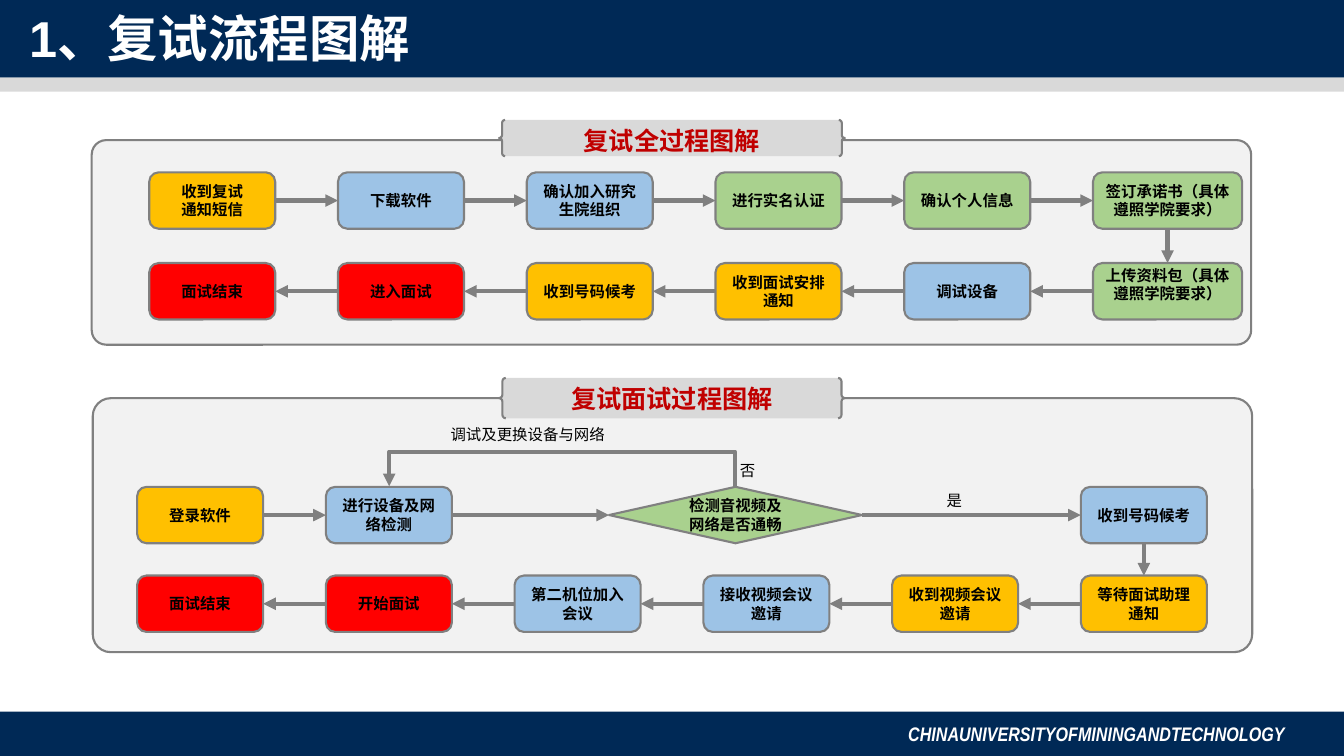
"""Build a slide with two flow charts of the admission interview."""
from lxml import etree
from pptx import Presentation, util as u
from pptx.dml.color import RGBColor
from pptx.enum import shapes as s, text as t
from pptx.oxml import ns

THEME = dict(
    navy="002956", band="D9D9D9", panel="F2F2F2", grey="808080",
    gold="FFC000", blue="9DC3E6", green="A9D18E", red="FF0000",
    white="FFFFFF", black="000000", head="C00000",
    title=36, sub=18, foot=14, step=11, edge=1.5, arrow=3,
    font="Arial", narrow="Arial Narrow",
)
TITLE = "1、复试流程图解"
FOOTER = "CHINAUNIVERSITYOFMININGANDTECHNOLOGY"
BARS = [(0, 0.77, "navy"), (0.77, 0.14, "band"), (7.06, 0.44, "navy")]
PITCH, WIDE, TALL = 1.872, 1.25, 0.56

FLOWS = [
    dict(
        head="复试全过程图解", tab=(4.95, 1.19, 3.43, 0.36),
        panel=(0.91, 1.39, 11.5, 2.03), left=1.48, rows=(1.71, 2.61),
        steps=[
            ("收到复试\n通知短信", "gold", 0, 0),
            ("下载软件", "blue", 1, 0),
            ("确认加入研究生院组织", "blue", 2, 0),
            ("进行实名认证", "green", 3, 0),
            ("确认个人信息", "green", 4, 0),
            ("签订承诺书（具体遵照学院要求）", "green", 5, 0, dict(wide=1.48)),
            ("上传资料包（具体遵照学院要求）", "green", 5, 1, dict(wide=1.48, high=True)),
            ("调试设备", "blue", 4, 1),
            ("收到面试安排通知", "gold", 3, 1),
            ("收到号码候考", "gold", 2, 1),
            ("进入面试", "red", 1, 1),
            ("面试结束", "red", 0, 1),
        ],
    ),
    dict(
        head="复试面试过程图解", tab=(4.95, 3.75, 3.43, 0.4),
        panel=(0.92, 3.95, 11.5, 2.52), left=1.36, rows=(4.83, 5.71),
        steps=[
            ("登录软件", "gold", 0, 0),
            ("进行设备及网络检测", "blue", 1, 0),
            ("检测音视频及网络是否通畅", "green", 2.5, 0, dict(wide=2.51, kind="DIAMOND")),
            ("收到号码候考", "blue", 5, 0),
            ("等待面试助理通知", "gold", 5, 1),
            ("收到视频会议邀请", "gold", 4, 1),
            ("接收视频会议邀请", "blue", 3, 1),
            ("第二机位加入会议", "blue", 2, 1),
            ("开始面试", "red", 1, 1),
            ("面试结束", "red", 0, 1),
        ],
    ),
]
LABELS = [
    ("是", (9.29, 4.82, 0.36, 0.29)),
    ("否", (7.24, 4.53, 0.36, 0.29)),
    ("调试及更换设备与网络", (4.37, 4.17, 1.74, 0.29)),
]
LOOP = dict(start=7.29, end=3.86, y=4.83, rise=0.36)

deck = Presentation()
deck.slide_width, deck.slide_height = u.Inches(13.33), u.Inches(7.5)
slide = deck.slides.add_slide(deck.slide_layouts[6])


def color(name):
    return RGBColor.from_string(THEME[name])


def write(shape, words, size="step", ink="black", bold=True, italic=False,
          font="font", align="CENTER", anchor="MIDDLE", wrap=True, inset=None,
          space=None):
    frame = shape.text_frame
    frame.text = words
    frame.word_wrap = wrap
    frame.vertical_anchor = t.MSO_ANCHOR[anchor]
    if inset:
        (frame.margin_left, frame.margin_top,
         frame.margin_right, frame.margin_bottom) = map(u.Inches, inset)
    for para in frame.paragraphs:
        para.alignment = t.PP_ALIGN[align]
        if space:
            para.line_spacing = space
        for run in para.runs:
            face = run.font
            face.name, face.size = THEME[font], u.Pt(THEME[size])
            face.bold, face.italic = bold, italic
            face.color.rgb = color(ink)


def block(kind, box, fill, edge=True, round=None):
    shape = slide.shapes.add_shape(s.MSO_SHAPE[kind], *map(u.Inches, box))
    shape.shadow.inherit = False
    shape.fill.solid()
    shape.fill.fore_color.rgb = color(fill)
    if edge:
        shape.line.color.rgb = color("grey")
        shape.line.width = u.Pt(THEME["edge"])
    else:
        shape.line.fill.background()
    if round:
        shape.adjustments[0] = round
    return shape


def label(words, box, **style):
    write(slide.shapes.add_textbox(*map(u.Inches, box)), words, **style)


def arrow(start, end, kind="STRAIGHT"):
    line = slide.shapes.add_connector(
        s.MSO_CONNECTOR[kind], *map(u.Inches, (*start, *end)))
    line.line.color.rgb = color("grey")
    line.line.width = u.Pt(THEME["arrow"])
    tip = etree.SubElement(line.line._get_or_add_ln(), ns.qn("a:tailEnd"))
    tip.set("type", "triangle")
    etree.SubElement(line._element.spPr, ns.qn("a:effectLst"))
    return line


def link(one, two):
    (x, y, w, h), (tox, toy, tow, toh) = one, two
    if y != toy:
        arrow((x + w / 2, y + h), (tox + tow / 2, toy))
    elif tox > x:
        arrow((x + w, y + h / 2), (tox, toy + toh / 2))
    else:
        arrow((x, y + h / 2), (tox + tow, toy + toh / 2))


def step(flow, words, fill, col, row, more=None):
    more = more or {}
    box = (flow["left"] + col * PITCH, flow["rows"][row], more.get("wide", WIDE), TALL)
    style = dict(anchor="TOP", inset=(0.1, 0, 0.1, 0)) if more.get("high") else {}
    write(block(more.get("kind", "ROUNDED_RECTANGLE"), box, fill), words, **style)
    return box


def draw(flow):
    block("ROUNDED_RECTANGLE", flow["panel"], "panel", round=0.071)
    write(block("DOUBLE_BRACE", flow["tab"], "band"), flow["head"], size="sub",
          ink="head", anchor="TOP", inset=(0, 0.01, 0, 0))
    boxes = [step(flow, *item) for item in flow["steps"]]
    for one, two in zip(boxes, boxes[1:]):
        link(one, two)


def loop(start, end, y, rise):
    mid, half, thin = (start + end) / 2, (start - end) / 2, 0.01
    bend = arrow((mid - thin / 2, y + half), (mid + thin / 2, y - half), "ELBOW")
    props = bend._element.spPr
    props.find(ns.qn("a:xfrm")).set("rot", str(270 * 60000))
    guide = etree.SubElement(props.find(ns.qn("a:prstGeom")).find(ns.qn("a:avLst")),
                             ns.qn("a:gd"))
    guide.set("name", "adj1")
    guide.set("fmla", f"val {int(rise / thin * 100000)}")


for top, tall, fill in BARS:
    block("RECTANGLE", (0, top, 13.33, tall), fill, edge=False)
label(FOOTER, (8.91, 7.11, 4, 0.34), size="foot", ink="white", italic=True,
      font="narrow", align="LEFT", anchor="TOP", wrap=False)
label(TITLE, (0.19, 0.09, 11.5, 0.63), size="title", ink="white", align="LEFT",
      space=0.9)
for flow in FLOWS:
    draw(flow)
loop(**LOOP)
for words, box in LABELS:
    label(words, box, bold=False, align="LEFT", anchor="TOP", wrap=False)
deck.save("out.pptx")
